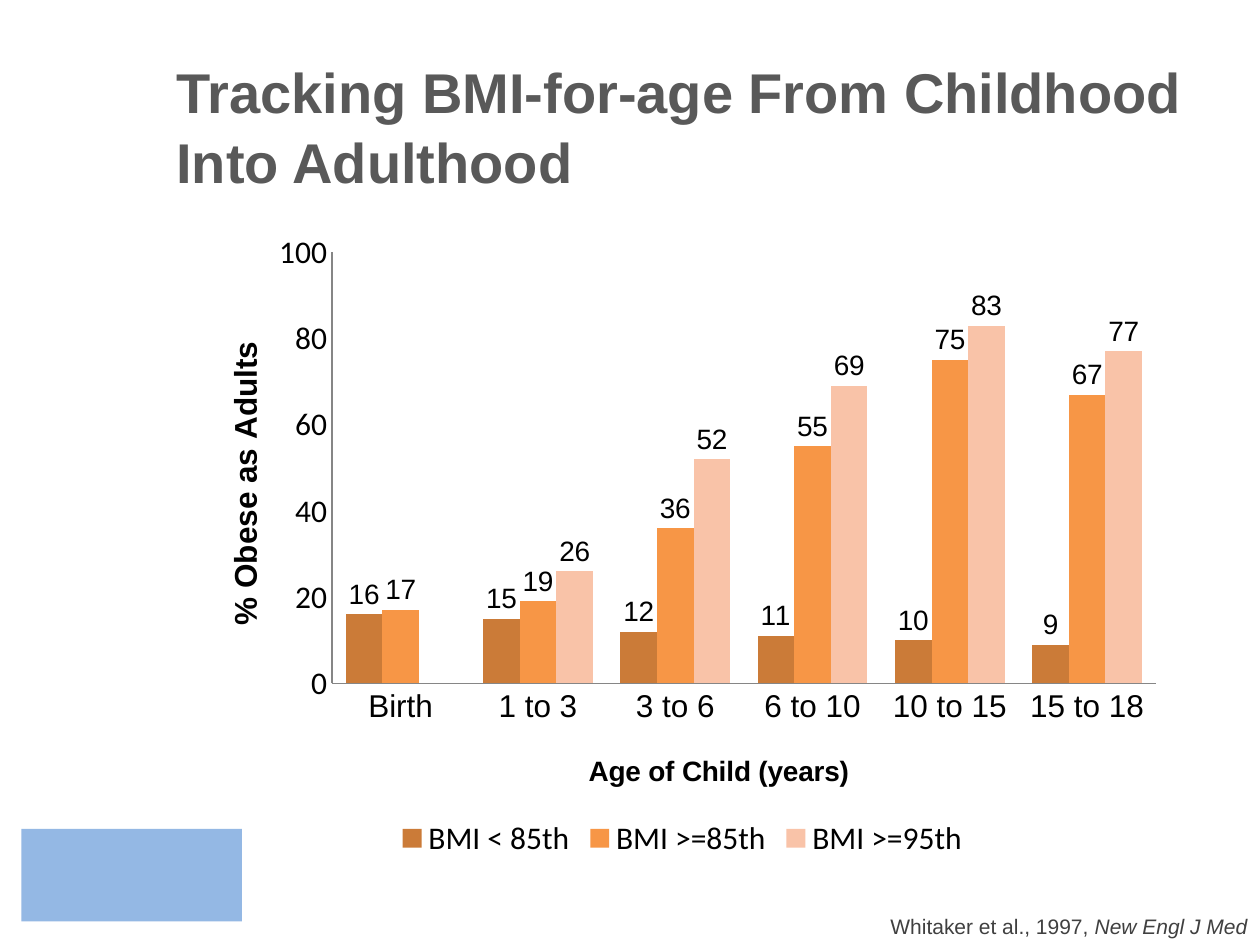
from dataclasses import dataclass

from lxml import etree
from pptx import Presentation
from pptx.chart.data import CategoryChartData
from pptx.dml.color import RGBColor
from pptx.enum.chart import XL_CHART_TYPE, XL_LABEL_POSITION, XL_LEGEND_POSITION, XL_TICK_MARK
from pptx.enum.shapes import MSO_SHAPE
from pptx.enum.text import MSO_ANCHOR, PP_ALIGN
from pptx.oxml.ns import qn
from pptx.util import Inches, Pt

COLUMNS = XL_CHART_TYPE.COLUMN_CLUSTERED
BOTTOM = XL_LEGEND_POSITION.BOTTOM
OUTSIDE = XL_LABEL_POSITION.OUTSIDE_END
NO_TICKS = XL_TICK_MARK.NONE
TITLE_ONLY = 5
PAGE_WIDTH, PAGE_HEIGHT = Inches(10), Inches(7.5)


@dataclass(frozen=True)
class Theme:
    font: str = "Arial"
    chart_font: str = "Calibri"
    title: str = "595959"
    source: str = "404040"
    ink: str = "000000"
    axis: str = "868686"
    block: str = "94B8E4"
    series: tuple = ("CB7B38", "F79646", "F9C3A8")
    title_size: float = 32
    axis_size: float = 18
    label_size: float = 16
    source_size: float = 12


THEME = Theme()
AGES = ["Birth", "1 to 3", "3 to 6", "6 to 10", "10 to 15", "15 to 18"]
OBESE_ADULTS = {
    "BMI < 85th": [16, 15, 12, 11, 10, 9],
    "BMI >=85th": [17, 19, 36, 55, 75, 67],
    "BMI >=95th": [None, 26, 52, 69, 83, 77],
}


def area(left, top, width, height):
    """Turn shares of the page into a left, top, width, height tuple."""
    return (int(PAGE_WIDTH * left), int(PAGE_HEIGHT * top),
            int(PAGE_WIDTH * width), int(PAGE_HEIGHT * height))


def style(font, size, color, name=THEME.font, bold=False, italic=False):
    font.name, font.size = name, Pt(size)
    font.bold, font.italic = bold, italic
    font.color.rgb = RGBColor.from_string(color)


def add_span(para, text, size, color, **look):
    span = para.add_run()
    span.text = text
    style(span.font, size, color, **look)


def place(parent, index, target=None, **shares):
    """Give a chart part a manual layout in shares of the chart's size."""
    for old in parent.findall(qn("c:layout")):
        parent.remove(old)
    layout = etree.Element(qn("c:layout"))
    parent.insert(index, layout)
    manual = etree.SubElement(layout, qn("c:manualLayout"))
    if target:
        etree.SubElement(manual, qn("c:layoutTarget"), val=target)
    for side in ("x", "y"):
        etree.SubElement(manual, qn(f"c:{side}Mode"), val="edge")
    for key, share in shares.items():
        etree.SubElement(manual, qn(f"c:{key}"), val=str(share))


def set_title(page, lines):
    box = page.shapes.title
    box.left, box.top, box.width, box.height = area(0.13, 0.05, 0.87, 0.11)
    frame = box.text_frame
    frame.word_wrap = True
    frame.vertical_anchor = MSO_ANCHOR.TOP
    frame.margin_top = Inches(0.08)
    for number, line in enumerate(lines):
        para = frame.add_paragraph() if number else frame.paragraphs[0]
        para.alignment = PP_ALIGN.LEFT
        para.line_spacing = 1.0
        para.space_before = Pt(1.6 if number else 0)
        add_span(para, line, THEME.title_size, THEME.title, bold=True)


def format_axis(axis, title, title_size, tick_font, **position):
    axis.major_tick_mark = axis.minor_tick_mark = NO_TICKS
    axis.has_major_gridlines = False
    axis.format.line.color.rgb = RGBColor.from_string(THEME.axis)
    style(axis.tick_labels.font, THEME.axis_size, THEME.ink, name=tick_font)
    para = axis.axis_title.text_frame.paragraphs[0]
    add_span(para, title, title_size, THEME.ink, bold=True)
    place(axis.axis_title._element, 1, **position)


def format_series(series, color):
    series.format.fill.solid()
    series.format.fill.fore_color.rgb = RGBColor.from_string(color)
    labels = series.data_labels
    labels.show_value = True
    labels.position = OUTSIDE
    style(labels.font, THEME.label_size, THEME.ink)


def add_column_chart(page):
    data = CategoryChartData()
    data.categories = AGES
    for name, values in OBESE_ADULTS.items():
        data.add_series(name, values)
    chart = page.shapes.add_chart(COLUMNS, *area(0.15, 0.233, 0.783, 0.681), data).chart
    style(chart.font, THEME.axis_size, THEME.ink, name=THEME.chart_font)
    chart.has_title = False
    chart.has_legend = True
    chart.legend.position = BOTTOM
    chart.legend.include_in_layout = False

    plot = chart.plots[0]
    plot.gap_width, plot.overlap = 75, 0
    plot.vary_by_categories = False
    for series, color in zip(plot.series, THEME.series):
        format_series(series, color)

    format_axis(chart.category_axis, "Age of Child (years)", THEME.label_size,
                THEME.font, x=0.4, y=0.82)
    format_axis(chart.value_axis, "% Obese as Adults", THEME.axis_size,
                THEME.chart_font, x=0.03, y=0.18)
    chart.value_axis.minimum_scale, chart.value_axis.maximum_scale = 0, 100
    chart.value_axis.major_unit = 20
    plot_area = chart._chartSpace.find(".//" + qn("c:plotArea"))
    place(plot_area, 0, target="inner", x=0.145, y=0.05, w=0.835, h=0.67)


def add_source(page, citation, journal):
    box = page.shapes.add_textbox(*area(0.607, 0.96, 0.393, 0.04))
    box.text_frame.word_wrap = True
    para = box.text_frame.paragraphs[0]
    para.alignment = PP_ALIGN.RIGHT
    add_span(para, citation, THEME.source_size, THEME.source)
    add_span(para, journal, THEME.source_size, THEME.source, italic=True)


def add_block(page):
    block = page.shapes.add_shape(MSO_SHAPE.RECTANGLE, *area(0.017, 0.877, 0.175, 0.098))
    block.shadow.inherit = False
    block.fill.solid()
    block.fill.fore_color.rgb = RGBColor.from_string(THEME.block)
    block.line.fill.background()


def main():
    deck = Presentation()
    deck.slide_width, deck.slide_height = PAGE_WIDTH, PAGE_HEIGHT
    page = deck.slides.add_slide(deck.slide_layouts[TITLE_ONLY])
    set_title(page, ["Tracking BMI-for-age From Childhood", "Into Adulthood"])
    add_column_chart(page)
    add_source(page, "Whitaker et al., 1997, ", "New Engl J Med")
    add_block(page)
    deck.save("out.pptx")


if __name__ == "__main__":
    main()
